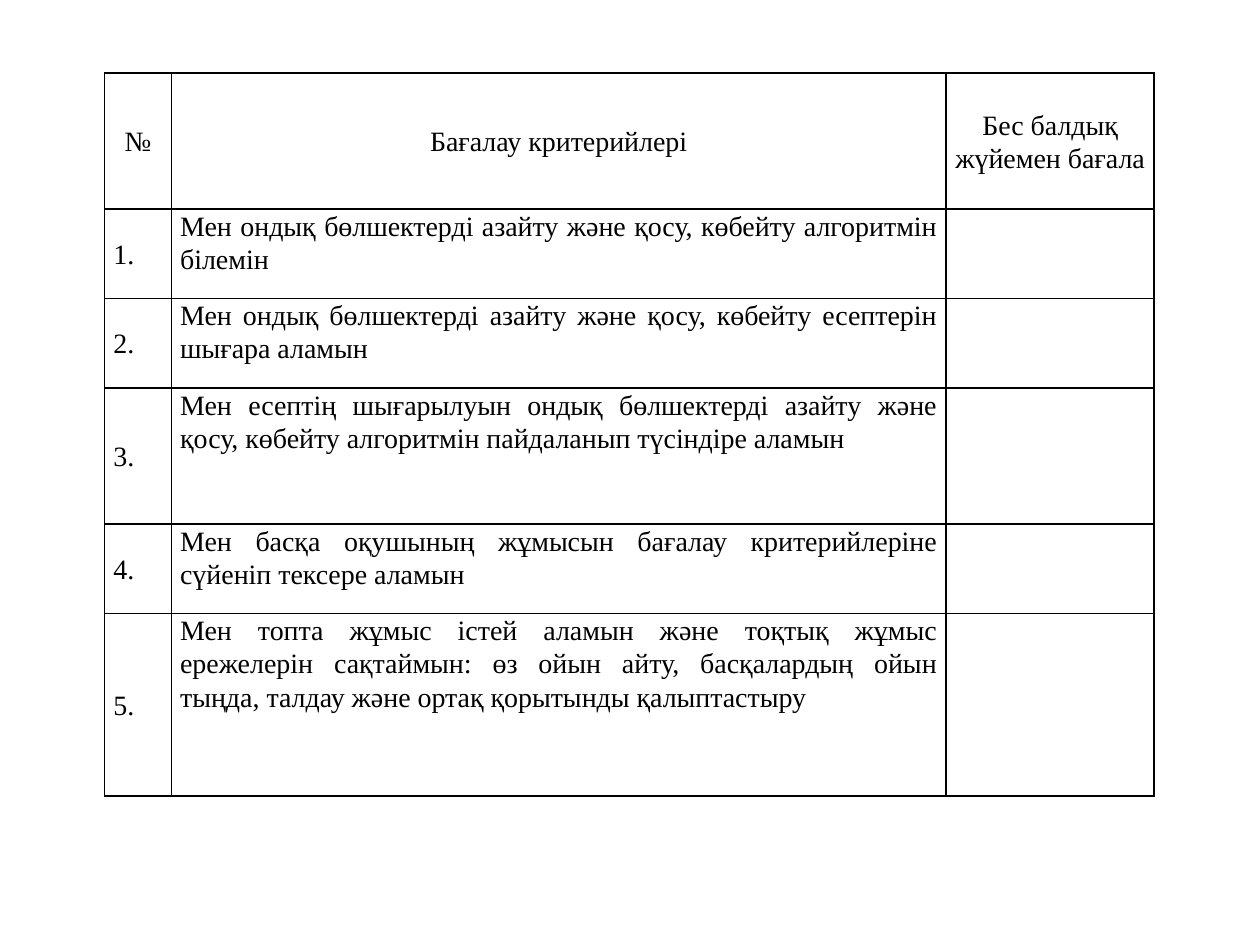
"""Build a slide with a self-assessment criteria table."""
from lxml import etree
from pptx import Presentation
from pptx.dml.color import RGBColor
from pptx.enum.text import MSO_ANCHOR, PP_ALIGN
from pptx.oxml.ns import qn
from pptx.util import Inches, Pt

LEFT, CENTER, JUSTIFY = PP_ALIGN.LEFT, PP_ALIGN.CENTER, PP_ALIGN.JUSTIFY
TOP, MIDDLE = MSO_ANCHOR.TOP, MSO_ANCHOR.MIDDLE
BLANK_LAYOUT = 6
FONT = "Times New Roman"
COLORS = {"ink": "000000", "paper": "FFFFFF"}
COL_WIDTHS = [0.53, 6.15, 1.65]
ROW_HEIGHTS = [1.08, 0.71, 0.71, 1.08, 0.71, 1.45]
HEADERS = ["№", "Бағалау критерийлері", "Бес балдық жүйемен бағала"]
CRITERIA = [
    "Мен ондық бөлшектерді азайту және қосу, көбейту алгоритмін білемін",
    "Мен ондық бөлшектерді азайту және қосу, көбейту есептерін шығара аламын",
    "Мен есептің шығарылуын ондық бөлшектерді азайту және қосу, көбейту "
    "алгоритмін пайдаланып түсіндіре аламын",
    "Мен басқа оқушының жұмысын бағалау критерийлеріне сүйеніп тексере аламын",
    "Мен топта жұмыс істей аламын және тоқтық жұмыс ережелерін сақтаймын: "
    "өз ойын айту, басқалардың ойын тыңда, талдау және ортақ қорытынды "
    "қалыптастыру",
]


def set_borders(cell, color, width=1):
    """Draw a solid line on all four sides of a cell."""
    tc_pr = cell._tc.get_or_add_tcPr()
    for side in ("lnL", "lnR", "lnT", "lnB"):
        ln = etree.SubElement(tc_pr, qn(f"a:{side}"), w=str(Pt(width)))
        fill = etree.SubElement(ln, qn("a:solidFill"))
        etree.SubElement(fill, qn("a:srgbClr"), val=color)


def style_cell(cell):
    """Give a cell its borders, fill and margins."""
    set_borders(cell, COLORS["ink"])
    cell.fill.solid()
    cell.fill.fore_color.rgb = RGBColor.from_string(COLORS["paper"])
    cell.margin_left = cell.margin_right = Inches(0.07)
    cell.margin_top = cell.margin_bottom = 0


def write_cell(cell, text, align=LEFT, anchor=MIDDLE, size=16, color="ink"):
    """Write formatted text into a cell."""
    cell.vertical_anchor = anchor
    p = cell.text_frame.paragraphs[0]
    p.alignment = align
    p.line_spacing = 1.07
    r = p.add_run()
    r.text = text
    r.font.name = FONT
    r.font.size = Pt(size)
    r.font.bold = False
    r.font.color.rgb = RGBColor.from_string(COLORS[color])


def add_grid(slide, left, top):
    """Add an empty bordered table and return it."""
    frame = slide.shapes.add_table(
        len(ROW_HEIGHTS), len(COL_WIDTHS), Inches(left), Inches(top),
        Inches(sum(COL_WIDTHS)), Inches(sum(ROW_HEIGHTS)))
    table = frame.table
    table.first_row = table.horz_banding = False
    for col, width in zip(table.columns, COL_WIDTHS):
        col.width = Inches(width)
    for row, height in zip(table.rows, ROW_HEIGHTS):
        row.height = Inches(height)
    for cell in table.iter_cells():
        style_cell(cell)
    return table


def main():
    """Build and save the presentation."""
    prs = Presentation()
    prs.slide_width, prs.slide_height = Inches(10), Inches(7.5)
    slide = prs.slides.add_slide(prs.slide_layouts[BLANK_LAYOUT])
    table = add_grid(slide, 0.83, 0.58)
    for col, header in enumerate(HEADERS):
        write_cell(table.cell(0, col), header, align=CENTER)
    for row, criterion in enumerate(CRITERIA, start=1):
        write_cell(table.cell(row, 0), f"{row}.")
        write_cell(table.cell(row, 1), criterion, align=JUSTIFY, anchor=TOP)
    prs.save("out.pptx")


if __name__ == "__main__":
    main()
